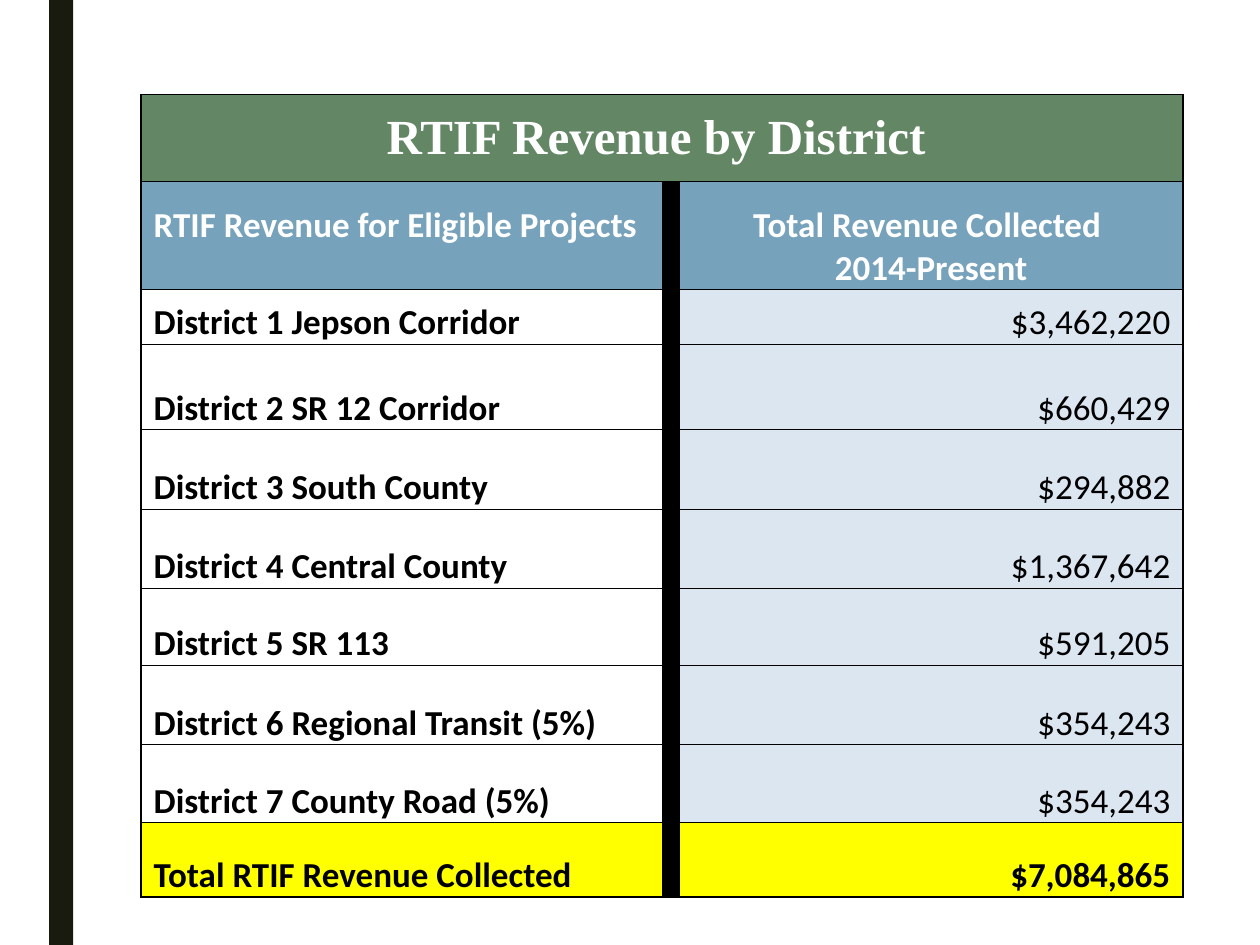
from lxml import etree
from pptx import Presentation
from pptx.dml.color import RGBColor
from pptx.enum import shapes, text
from pptx.oxml import ns
from pptx.util import Inches, Pt

# Content
TITLE = "RTIF Revenue by District "
HEADERS = (["RTIF Revenue for Eligible Projects"],
           ["Total Revenue Collected ", "2014-Present"])
DISTRICTS = [
    ("District 1 Jepson Corridor", "$3,462,220"),
    ("District 2 SR 12 Corridor", "$660,429"),
    ("District 3 South County", "$294,882"),
    ("District 4 Central County", "$1,367,642"),
    ("District 5 SR 113", "$591,205"),
    ("District 6 Regional Transit (5%)", "$354,243"),
    ("District 7 County Road (5%)", "$354,243"),
]
TOTAL = ("Total RTIF Revenue Collected", "$7,084,865")

# Grid, in inches
LEFT, TOP = 1.12, 0.75
COLUMNS = [4.14, 0.13, 4]
ROWS = [0.69, 0.86, 0.43, 0.68, 0.63, 0.63, 0.61, 0.63, 0.62, 0.59]
LABEL, DIVIDER, VALUE = range(3)
LAST = len(ROWS) - 1
INSET = 0.1
HEADER_LINE = 0.34

BLACK, WHITE = "000000", "FFFFFF"
GREEN, BLUE, PALE, YELLOW = "638764", "77A2BB", "DCE6F1", "FFFF00"
ALIGN = text.PP_ALIGN


def rgb(value):
    return RGBColor.from_string(value)


def border_widths(row, column):
    body = row >= 2
    return {
        "L": 0.5 if body and column == VALUE else 1,
        "R": 0.5 if body and column == DIVIDER else 1,
        "T": 1 if row <= 2 else 0.5,
        "B": 1 if row in (0, LAST) or (row == 1 and column != DIVIDER) else 0.5,
    }


def set_borders(cell, widths):
    properties = cell._tc.get_or_add_tcPr()
    for side, width in widths.items():
        line = etree.SubElement(properties, ns.qn(f"a:ln{side}"), w=str(Pt(width)))
        fill = etree.SubElement(line, ns.qn("a:solidFill"))
        etree.SubElement(fill, ns.qn("a:srgbClr"), val=BLACK)


def set_fill(cell, color):
    if color is None:
        cell.fill.background()
    else:
        cell.fill.solid()
        cell.fill.fore_color.rgb = rgb(color)


def write(cell, lines, align=ALIGN.LEFT, color=BLACK, bold=True, size=20,
          font="Calibri", left=0, right=0, bottom=0):
    cell.margin_left, cell.margin_right = Inches(left), Inches(right)
    cell.margin_bottom = Inches(bottom)
    for index, line in enumerate(lines):
        frame = cell.text_frame
        paragraph = frame.add_paragraph() if index else frame.paragraphs[0]
        paragraph.alignment = align
        run = paragraph.add_run()
        run.text = line
        run.font.name, run.font.size = font, Pt(size)
        run.font.bold = bold
        run.font.color.rgb = rgb(color)


presentation = Presentation()
presentation.slide_width, presentation.slide_height = Inches(10), Inches(7.5)
slide = presentation.slides.add_slide(presentation.slide_layouts[6])

# Side bar
bar = slide.shapes.add_shape(shapes.MSO_SHAPE.RECTANGLE, Inches(0.39), 0,
                             Inches(0.19), presentation.slide_height)
bar.shadow.inherit = False
bar.fill.solid()
bar.fill.fore_color.rgb = rgb("191B0E")
bar.line.fill.background()

# Table grid
table = slide.shapes.add_table(
    len(ROWS), len(COLUMNS), Inches(LEFT), Inches(TOP),
    Inches(sum(COLUMNS)), Inches(sum(ROWS))).table
table.first_row = table.horz_banding = False
for column, width in zip(table.columns, COLUMNS):
    column.width = Inches(width)
for row, height in zip(table.rows, ROWS):
    row.height = Inches(height)

# Borders and fills
row_fills = ([(GREEN,) * 3, (BLUE, BLACK, BLUE)]
             + [(None, BLACK, PALE)] * len(DISTRICTS)
             + [(YELLOW, BLACK, YELLOW)])
for row, fills in enumerate(row_fills):
    for column, color in enumerate(fills):
        cell = table.cell(row, column)
        cell.vertical_anchor = text.MSO_ANCHOR.BOTTOM
        cell.margin_left = cell.margin_right = 0
        cell.margin_top = cell.margin_bottom = 0
        set_borders(cell, border_widths(row, column))
        set_fill(cell, color)

# Title and column headers
table.cell(0, 0).merge(table.cell(0, VALUE))
write(table.cell(0, 0), [TITLE], ALIGN.CENTER, WHITE, size=28,
      font="Times New Roman", bottom=0.13)
write(table.cell(1, LABEL), HEADERS[0], color=WHITE, left=INSET, bottom=HEADER_LINE)
write(table.cell(1, VALUE), HEADERS[1], ALIGN.CENTER, WHITE)

# Districts and total
for row, (label, value) in enumerate(DISTRICTS + [TOTAL], start=2):
    write(table.cell(row, LABEL), [label], left=INSET)
    write(table.cell(row, VALUE), [value], ALIGN.RIGHT, bold=row == LAST, right=INSET)

presentation.save("out.pptx")
